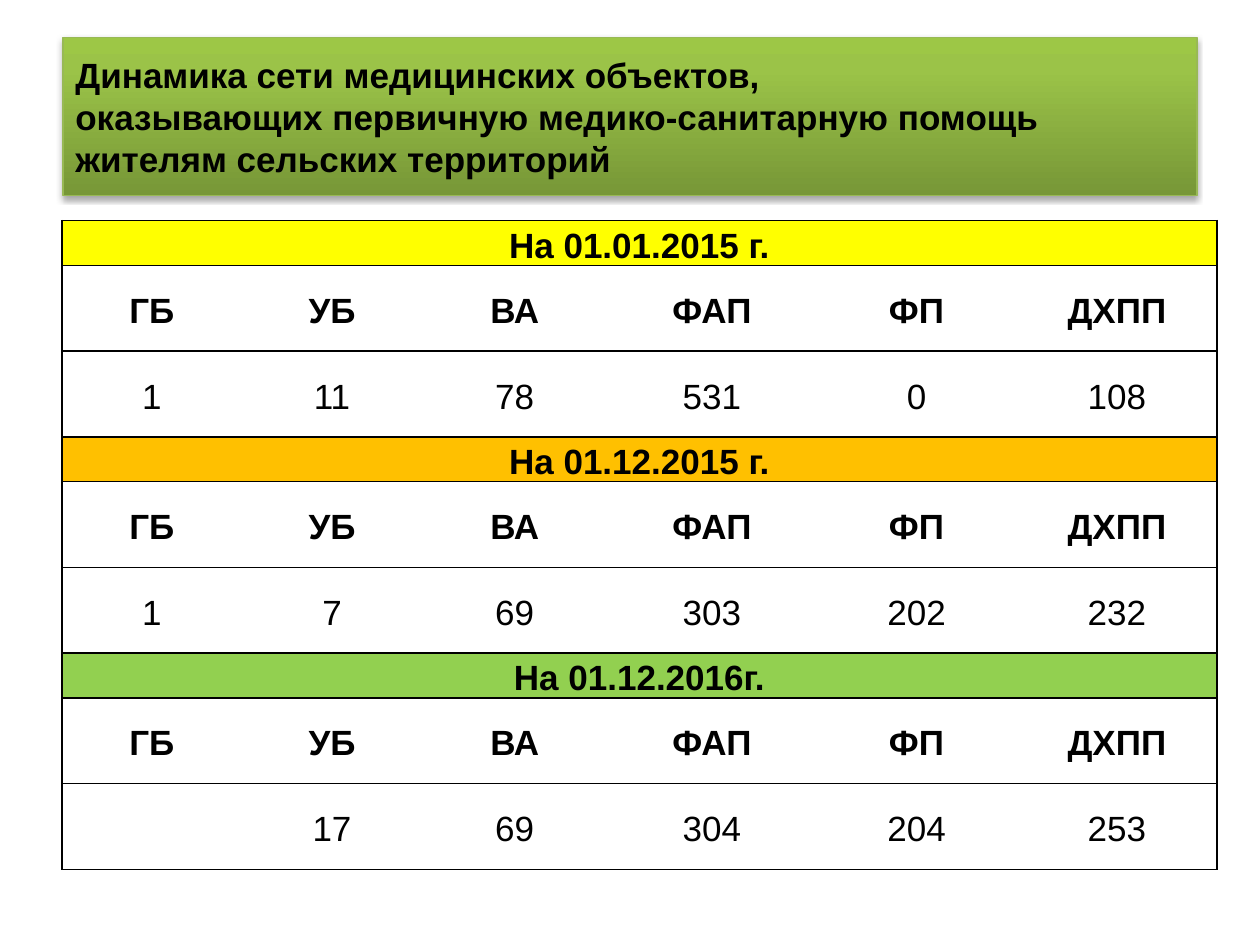
import copy
from dataclasses import dataclass

import lxml.etree
import pptx
import pptx.dml.color
import pptx.enum.shapes
import pptx.enum.text
import pptx.oxml
import pptx.oxml.ns
import pptx.util

Inches = pptx.util.Inches
Pt = pptx.util.Pt
RGB = pptx.dml.color.RGBColor.from_string
qn = pptx.oxml.ns.qn


@dataclass(frozen=True)
class Theme:
    font: str = "Arial"
    size: int = 20
    ink: str = "000000"
    paper: str = "FFFFFF"
    title_line: str = "98B955"
    title_stops: tuple = ((0, "779737"), (0.8, "9BC348"), (1, "9DC746"))
    border: float = 1


T = Theme()


def style_paragraph(p, bold, align):
    p.alignment = align
    for r in p.runs:
        r.font.name = T.font
        r.font.size = Pt(T.size)
        r.font.bold = bold
        r.font.color.rgb = RGB(T.ink)


def set_borders(cell, sides):
    """Draw the named sides of a cell and hide the others."""
    tcPr = cell._tc.get_or_add_tcPr()
    for i, side in enumerate("LRTB"):
        ln = lxml.etree.Element(qn(f"a:ln{side}"), w=str(Pt(T.border)))
        if side in sides:
            fill = lxml.etree.SubElement(ln, qn("a:solidFill"))
            lxml.etree.SubElement(fill, qn("a:srgbClr"), val=T.ink)
        else:
            lxml.etree.SubElement(ln, qn("a:noFill"))
        tcPr.insert(i, ln)


prs = pptx.Presentation()
prs.slide_width, prs.slide_height = Inches(10), Inches(7.5)
s = prs.slides.add_slide(prs.slide_layouts[6])

# Title banner
sp = s.shapes.add_shape(pptx.enum.shapes.MSO_SHAPE.RECTANGLE,
                        Inches(0.5), Inches(0.3), Inches(9), Inches(1.25))
sp.line.color.rgb = RGB(T.title_line)
sp.line.width = Pt(0.75)

# Banner gradient, dark at the bottom
sp.fill.gradient()
sp.fill.gradient_angle = 90
gs_list = sp._element.spPr.find(qn("a:gradFill")).find(qn("a:gsLst"))
gs_list.insert(1, copy.deepcopy(gs_list[0]))
for stop, (position, color) in zip(sp.fill.gradient_stops, T.title_stops):
    stop.position = position
    stop.color.rgb = RGB(color)

# Banner shadow
sp.shadow.inherit = False
effects = sp._element.spPr.find(qn("a:effectLst"))
shadow = lxml.etree.SubElement(effects, qn("a:outerShdw"), blurRad=str(Pt(3.1)),
                               dist=str(Pt(1.8)), dir="5400000", rotWithShape="0")
shade = lxml.etree.SubElement(shadow, qn("a:srgbClr"), val=T.ink)
lxml.etree.SubElement(shade, qn("a:alpha"), val="35000")

# Banner text
tf = sp.text_frame
tf.word_wrap = True
tf.vertical_anchor = pptx.enum.text.MSO_ANCHOR.MIDDLE
p = tf.paragraphs[0]
p.text = ("Динамика сети медицинских объектов, \v"
          "оказывающих первичную медико-санитарную помощь жителям сельских территорий")
style_paragraph(p, True, pptx.enum.text.PP_ALIGN.LEFT)

# Table content: one date band, one heading row and one value row per period
facilities = ["ГБ", "УБ", "ВА", "ФАП", "ФП", "ДХПП"]
periods = [
    ("На 01.01.2015 г.", "FFFF00", ["1", "11", "78", "531", "0", "108"]),
    ("На 01.12.2015 г.", "FFC000", ["1", "7", "69", "303", "202", "232"]),
    ("На 01.12.2016г.", "92D050", ["", "17", "69", "304", "204", "253"]),
]
rows = []
for date, color, values in periods:
    rows += [([date] + [""] * 5, color, True),
             (facilities, T.paper, True),
             (values, T.paper, False)]

# Table grid
col_widths = [1.43, 1.43, 1.47, 1.66, 1.59, 1.59]
row_heights = [0.32, 0.68, 0.68] + [0.29, 0.68, 0.68] * 2
table = s.shapes.add_table(len(rows), len(col_widths), Inches(0.49), Inches(1.75),
                           Inches(sum(col_widths)), Inches(sum(row_heights))).table
for column, width in zip(table.columns, col_widths):
    column.width = Inches(width)
for row, height in zip(table.rows, row_heights):
    row.height = Inches(height)

# Table cells
last = len(col_widths) - 1
for i, (texts, color, bold) in enumerate(rows):
    is_band = i % 3 == 0
    if is_band:
        table.cell(i, 0).merge(table.cell(i, last))
    for j, text in enumerate(texts):
        cell = table.cell(i, j)
        cell.fill.solid()
        cell.fill.fore_color.rgb = RGB(color)
        cell.vertical_anchor = pptx.enum.text.MSO_ANCHOR.MIDDLE
        cell.margin_left = cell.margin_right = Inches(0.07)
        cell.margin_top = cell.margin_bottom = 0
        sides = "TB"
        if j == 0:
            sides += "L"
        if j == last or is_band and j == 0:
            sides += "R"
        set_borders(cell, sides)
        if text:
            p = cell.text_frame.paragraphs[0]
            p.text = text
            p.line_spacing = 1.15
            style_paragraph(p, bold, pptx.enum.text.PP_ALIGN.CENTER)

prs.save("out.pptx")
